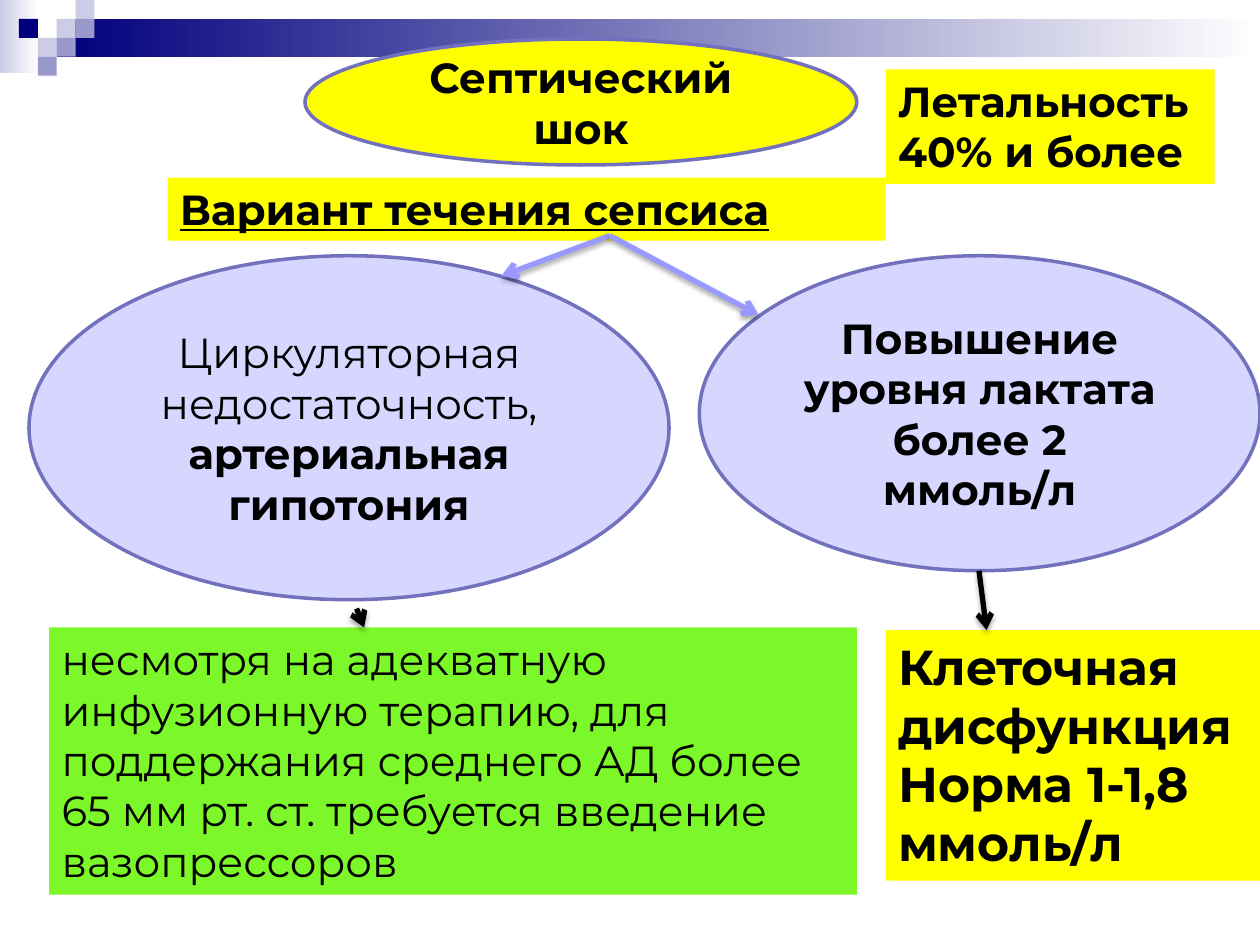
from lxml import etree
from pptx import Presentation
from pptx.dml.color import RGBColor as Rgb
from pptx.enum.shapes import MSO_CONNECTOR as Conn, MSO_SHAPE as Form
from pptx.enum.text import MSO_ANCHOR as Anchor, PP_ALIGN as Align
from pptx.oxml import parse_xml
from pptx.oxml.ns import nsdecls, qn
from pptx.util import Inches, Pt

theme = {
    "navy": Rgb.from_string("00007D"),
    "mist": Rgb.from_string("CCCCE6"),
    "slate": Rgb.from_string("9999CC"),
    "white": Rgb.from_string("FFFFFF"),
    "black": Rgb.from_string("000000"),
    "yellow": Rgb.from_string("FFFF00"),
    "lilac": Rgb.from_string("D6D6FF"),
    "green": Rgb.from_string("7CF729"),
    "edge": Rgb.from_string("7171BD"),
    "arrow": Rgb.from_string("9999FF"),
    "font": "Montserrat",
    "body": Pt(24),
    "large": Pt(28),
}

deck = Presentation()
deck.slide_width, deck.slide_height = Inches(10), Inches(7.5)
slide = deck.slides.add_slide(deck.slide_layouts[6])


def add_form(form, box, color=None):
    shape = slide.shapes.add_shape(form, *map(Inches, box))
    shape.shadow.inherit = False
    shape.line.fill.background()
    if color:
        shape.fill.solid()
        shape.fill.fore_color.rgb = theme[color]
    return shape


def add_text(shape, lines, size="body", style=None):
    frame = shape.text_frame
    oval = shape.auto_shape_type == Form.OVAL
    layout = {"word_wrap": True, "vertical_anchor": Anchor.MIDDLE if oval else Anchor.TOP}
    for name, value in layout.items():
        setattr(frame, name, value)
    for i, (text, bold) in enumerate(lines):
        para = frame.paragraphs[0] if i == 0 else frame.add_paragraph()
        para.alignment = Align.CENTER if oval else Align.LEFT
        run = para.add_run()
        run.text = text
        look = {"name": theme["font"], "size": theme[size], "bold": bold, **(style or {})}
        for name, value in look.items():
            setattr(run.font, name, value)
        run.font.color.rgb = theme["black"]


bands = [((0, 0, 0.31, 0.58), "mist"), ((0.45, 0.15, 9.55, 0.3), "navy")]
for box, color in bands:
    fill = add_form(Form.RECTANGLE, box).fill
    fill.gradient()
    fill.gradient_angle = 0
    for stop, tone in zip(fill.gradient_stops, (color, "white")):
        stop.color.rgb = theme[tone]

step = 0.15
tiles = [
    (3, 1, "mist"), (4, 0, "mist"), (4, 1, "slate"), (2, 2, "mist"),
    (1, 1, "navy"), (3, 2, "slate"), (2, 3, "slate"),
]
for col, row, color in tiles:
    add_form(Form.RECTANGLE, (col * step, row * step, step, step), color)

ovals = [
    ((2.42, 0.31, 4.38, 1), "yellow", [("Септический шок", True)]),
    ((0.23, 2.03, 5.08, 2.73), "lilac", [
        ("Циркуляторная недостаточность,", False), ("артериальная гипотония", True)]),
    ((5.55, 2.03, 4.45, 2.5), "lilac", [("Повышение уровня лактата более 2 ммоль/л", True)]),
]
for box, color, lines in ovals:
    oval = add_form(Form.OVAL, box, color)
    oval.line.color.rgb = theme["edge"]
    oval.line.width = Pt(2)
    add_text(oval, lines)

panels = [
    ((1.33, 1.41, 5.7, 0.5), "yellow", "body", {"underline": True},
     [("Вариант течения сепсиса", True)]),
    ((0.39, 4.98, 6.41, 2.12), "green", "body", {}, [
        ("несмотря на адекватную", False),
        ("инфузионную терапию, для поддержания среднего АД более 65 мм рт. ст. "
         "требуется введение вазопрессоров", False)]),
    ((7.03, 5, 2.97, 1.99), "yellow", "large", {}, [
        (text, True) for text in ("Клеточная", "дисфункция", "Норма 1-1,8", "ммоль/л")]),
    ((7.03, 0.55, 2.61, 0.91), "yellow", "body", {}, [
        (text, True) for text in ("Летальность", "40% и более")]),
]
for box, color, size, style, lines in panels:
    add_text(add_form(Form.RECTANGLE, box, color), lines, size, style)

shadow = (
    f'<a:effectLst {nsdecls("a")}><a:outerShdw blurRad="{Pt(3.1)}" dist="{Pt(1.8)}" '
    'dir="5400000" rotWithShape="0"><a:srgbClr val="000000"><a:alpha val="35000"/>'
    '</a:srgbClr></a:outerShdw></a:effectLst>'
)
arrows = [
    ((4.84, 1.87, 3.98, 2.19), "arrow"),
    ((4.84, 1.87, 6.02, 2.5), "arrow"),
    ((7.77, 4.53, 7.83, 5), "black"),
    ((2.83, 4.83, 2.89, 4.98), "black"),
]
for ends, color in arrows:
    link = slide.shapes.add_connector(Conn.STRAIGHT, *map(Inches, ends))
    link.line.color.rgb = theme[color]
    link.line.width = Pt(3)
    etree.SubElement(link.line._get_or_add_ln(), qn("a:tailEnd"), type="arrow")
    link._element.spPr.append(parse_xml(shadow))

deck.save("out.pptx")
